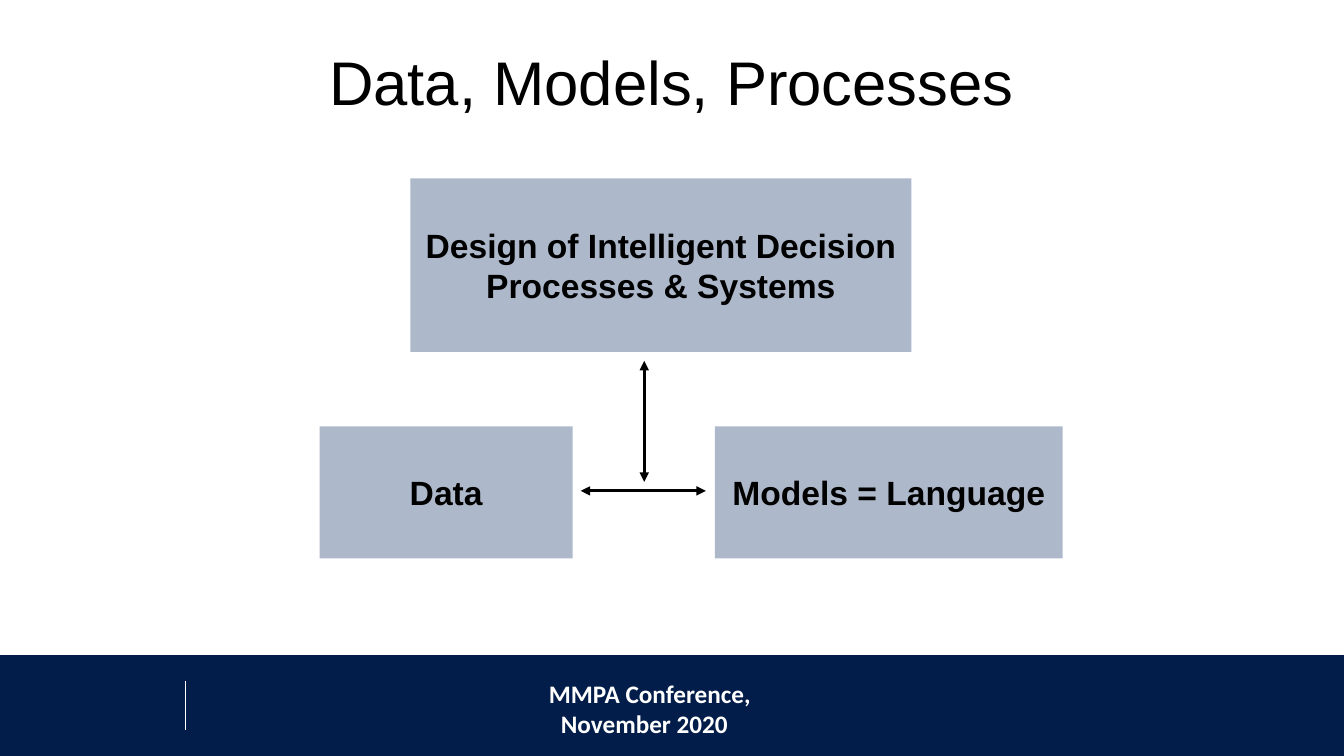
from lxml import etree
from pptx import Presentation
from pptx.dml.color import RGBColor
from pptx.enum.shapes import MSO_CONNECTOR, MSO_SHAPE
from pptx.enum.text import MSO_ANCHOR, PP_ALIGN
from pptx.oxml.ns import qn
from pptx.util import Inches, Pt

RECT = MSO_SHAPE.RECTANGLE
STRAIGHT = MSO_CONNECTOR.STRAIGHT
MIDDLE, TOP = MSO_ANCHOR.MIDDLE, MSO_ANCHOR.TOP
CENTER = PP_ALIGN.CENTER

COLORS = {"navy": "021D49", "box": "ADB9CA", "text": "000000", "white": "FFFFFF"}
SLIDE_W, SLIDE_H = 13.33, 7.5
FOOTER_H = 1

TITLE = "Data, Models, Processes"
FOOTER = ["MMPA Conference,", "November 2020"]
BOXES = [
    ("Data", (3.17, 4.23, 2.51, 1.31)),
    ("Models = Language", (7.09, 4.23, 3.45, 1.31)),
    ("Design of Intelligent Decision Processes & Systems", (4.07, 1.77, 4.97, 1.72)),
]
ARROWS = [(5.76, 4.87, 7, 4.87), (6.39, 3.58, 6.39, 4.78)]
DIVIDER = (1.84, 6.76, 1.84, 7.24)


def rgb(name):
    return RGBColor.from_string(COLORS[name])


def add_rect(s, at, fill):
    sp = s.shapes.add_shape(RECT, *map(Inches, at))
    sp.shadow.inherit = False
    sp.fill.solid()
    sp.fill.fore_color.rgb = rgb(fill)
    sp.line.fill.background()
    return sp


def set_text(sp, lines, size, font, color, bold=False, anchor=MIDDLE):
    tf = sp.text_frame
    tf.word_wrap = True
    tf.vertical_anchor = anchor
    tf.text = "\n".join(lines)
    for p in tf.paragraphs:
        p.alignment = CENTER
        for r in p.runs:
            r.font.size = Pt(size)
            r.font.name = font
            r.font.bold = bold
            r.font.color.rgb = rgb(color)
    return tf


def add_line(s, ends, color, width, arrows=False):
    cx = s.shapes.add_connector(STRAIGHT, *map(Inches, ends))
    cx.line.color.rgb = rgb(color)
    cx.line.width = Pt(width)
    if arrows:
        ln = cx.line._get_or_add_ln()
        for end in ("a:headEnd", "a:tailEnd"):
            etree.SubElement(ln, qn(end)).set("type", "triangle")
    etree.SubElement(cx._element.spPr, qn("a:effectLst"))


def main():
    prs = Presentation()
    prs.slide_width, prs.slide_height = Inches(SLIDE_W), Inches(SLIDE_H)
    s = prs.slides.add_slide(prs.slide_layouts[6])

    add_rect(s, (0, SLIDE_H - FOOTER_H, SLIDE_W, FOOTER_H), "navy")
    add_line(s, DIVIDER, "white", 0.5)
    footer = s.shapes.add_textbox(*map(Inches, (3.39, 6.68, 6.11, 0.71)))
    tf = set_text(footer, FOOTER, 18, "Calibri", "white", True, TOP)
    tf.paragraphs[1]._p.get_or_add_pPr().set("marR", str(Inches(0.11)))

    title = s.shapes.add_textbox(*map(Inches, (0, 0.24, SLIDE_W, 1.21)))
    tf = set_text(title, [TITLE], 44, "Arial", "text")
    tf.paragraphs[0].line_spacing = 0.9

    for label, at in BOXES:
        set_text(add_rect(s, at, "box"), [label], 24, "Arial", "text", True)
    for ends in ARROWS:
        add_line(s, ends, "text", 2.25, True)

    prs.save("out.pptx")


if __name__ == "__main__":
    main()
